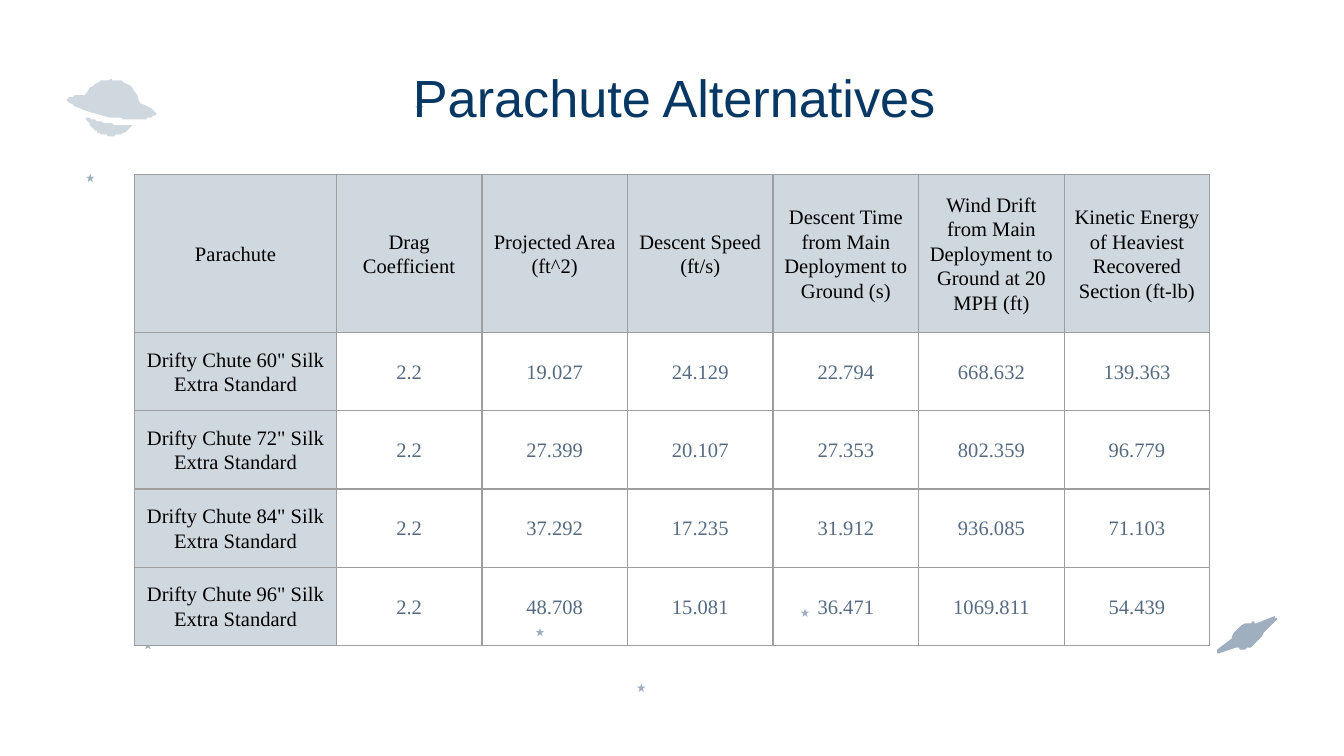
from lxml import etree
from pptx import Presentation
from pptx.dml.color import RGBColor
from pptx.enum.shapes import MSO_SHAPE
from pptx.enum.text import MSO_ANCHOR, PP_ALIGN
from pptx.oxml.ns import qn
from pptx.util import Pt

CENTER, MIDDLE, STAR = PP_ALIGN.CENTER, MSO_ANCHOR.MIDDLE, MSO_SHAPE.STAR_5_POINT
NAVY = RGBColor(0x07, 0x37, 0x63)
SLATE = RGBColor(0x56, 0x6B, 0x81)
BLACK = RGBColor(0, 0, 0)
PALE = RGBColor(0xCF, 0xD7, 0xDF)
STEEL = RGBColor(0x9F, 0xAF, 0xBF)
GREY = RGBColor(0x9E, 0x9E, 0x9E)

TITLE = "Parachute Alternatives"
HEADER = [
    "Parachute", "Drag Coefficient", "Projected Area (ft^2)", "Descent Speed (ft/s)",
    "Descent Time from Main Deployment to Ground (s)",
    "Wind Drift from Main Deployment to Ground at 20 MPH (ft)",
    "Kinetic Energy of Heaviest Recovered Section (ft-lb)",
]
PARACHUTES = [
    ('Drifty Chute 60" Silk Extra Standard', "2.2", "19.027", "24.129", "22.794", "668.632", "139.363"),
    ('Drifty Chute 72" Silk Extra Standard', "2.2", "27.399", "20.107", "27.353", "802.359", "96.779"),
    ('Drifty Chute 84" Silk Extra Standard', "2.2", "37.292", "17.235", "31.912", "936.085", "71.103"),
    ('Drifty Chute 96" Silk Extra Standard', "2.2", "48.708", "15.081", "36.471", "1069.811", "54.439"),
]
COLUMN_WIDTHS = [108] + [78] * 6
ROW_HEIGHTS = [84.6] + [41.9] * 4

STAR_SIZE = 4.5
STARS = [(77, 343.4), (341.3, 366.2), (429, 326), (46.1, 93), (222.5, 55.3), (287, 336.4)]

# Outlines: a start point, then lines (x, y) and Bezier curves (x1, y1, x2, y2, x, y).
PLANET_BOTTOM = [
    (45.4, 62.6), (46.8, 64.8, 48.2, 67, 49.7, 69.1), (52.6, 71.3, 56.2, 72.7, 59.8, 72.7),
    (64.1, 72.7, 68.4, 70.6, 71.3, 67), (67, 67, 62.6, 67, 58.3, 66.2),
    (54, 65.5, 49.7, 64.1, 45.4, 62.6),
]
PLANET_TOP = [
    (59.8, 42.5), (53.3, 42.5, 47.5, 46.1, 45.4, 51.8), (46.8, 51.8, 47.5, 51.8, 48.2, 51.8),
    (52.6, 51.8, 56.2, 52.6, 60.5, 53.3), (65.5, 54, 70.6, 55.4, 74.9, 56.9),
    (74.9, 51.1, 70.6, 45.4, 64.8, 43.2), (63.4, 42.5, 61.2, 42.5, 59.8, 42.5),
]
PLANET_RING = [
    (46.1, 51.1), (40.3, 51.1, 36.7, 51.8, 36, 53.3), (36, 56.2, 46.1, 60.5, 59, 62.6),
    (64.1, 63.4, 69.1, 64.1, 73.4, 64.1), (79.2, 64.1, 82.8, 62.6, 83.5, 61.2),
    (83.5, 58.3, 73.4, 54, 60.5, 51.8), (55.4, 51.1, 50.4, 51.1, 46.1, 51.1),
]
FAR_PLANET = [
    (682.6, 330.5), (673.2, 334.1), (672.5, 333.4, 671.8, 333.4, 671, 333.4),
    (666, 333.4, 661, 337, 659.5, 342), (652.3, 348.5),
    (651.6, 349.2, 651.6, 349.9, 652.3, 349.9), (653, 349.9), (662.4, 347),
    (663.8, 347, 664.6, 347.8, 665.3, 347.8), (670.3, 347.8, 674.6, 344.2, 676.8, 339.1),
    (684, 331.9), (684, 331.2, 684, 330.5, 683.3, 330.5),
]
OUTLINES = [(PLANET_BOTTOM, PALE), (PLANET_TOP, PALE), (PLANET_RING, PALE), (FAR_PLANET, STEEL)]


def curve_points(start, curve, steps=10):
    """Return points along a cubic Bezier curve, without its start."""
    points = []
    for i in range(1, steps + 1):
        t = i / steps
        u = 1 - t
        points.append(tuple(
            u**3 * start[k] + 3 * u * u * t * curve[k]
            + 3 * u * t * t * curve[k + 2] + t**3 * curve[k + 4]
            for k in (0, 1)))
    return points


def paint(sp, color):
    sp.shadow.inherit = False
    sp.fill.solid()
    sp.fill.fore_color.rgb = color
    sp.line.fill.background()


def add_outline(slide, outline, color):
    points = [outline[0]]
    for segment in outline[1:]:
        points += [segment] if len(segment) == 2 else curve_points(points[-1], segment)
    builder = slide.shapes.build_freeform(*points[0], scale=float(Pt(1)))
    builder.add_line_segments(points[1:], close=True)
    paint(builder.convert_to_shape(), color)


def write(tf, text, *, font, size, color, spacing=None):
    p = tf.paragraphs[0]
    p.alignment = CENTER
    p.line_spacing = spacing
    r = p.add_run()
    r.text = text
    r.font.name = font
    r.font.size = Pt(size)
    r.font.color.rgb = color


def add_borders(cell):
    tc_pr = cell._tc.get_or_add_tcPr()
    for side in ("lnL", "lnR", "lnT", "lnB"):
        ln = etree.SubElement(tc_pr, qn(f"a:{side}"), w=str(Pt(0.75)))
        fill = etree.SubElement(ln, qn("a:solidFill"))
        etree.SubElement(fill, qn("a:srgbClr"), val=str(GREY))


def add_parachute_table(slide):
    rows = [HEADER] + PARACHUTES
    table = slide.shapes.add_table(
        len(rows), len(HEADER), Pt(72.2), Pt(93.6),
        Pt(sum(COLUMN_WIDTHS)), Pt(sum(ROW_HEIGHTS))).table
    table.horz_banding = False
    table.first_row = False
    for column, width in zip(table.columns, COLUMN_WIDTHS):
        column.width = Pt(width)
    for i, values in enumerate(rows):
        table.rows[i].height = Pt(ROW_HEIGHTS[i])
        for j, text in enumerate(values):
            cell = table.cell(i, j)
            heading = i == 0 or j == 0
            cell.vertical_anchor = MIDDLE
            cell.margin_left = cell.margin_right = Pt(5)
            cell.margin_top = cell.margin_bottom = 0
            add_borders(cell)
            if heading:
                cell.fill.solid()
                cell.fill.fore_color.rgb = PALE
            else:
                cell.fill.background()
            write(cell.text_frame, text, font="Times New Roman", size=11,
                  color=BLACK if heading else SLATE, spacing=1.07)


def main():
    prs = Presentation()
    prs.slide_width, prs.slide_height = Pt(720), Pt(405)
    slide = prs.slides.add_slide(prs.slide_layouts[5])

    for outline, color in OUTLINES:
        add_outline(slide, outline, color)
    for x, y in STARS:
        paint(slide.shapes.add_shape(STAR, Pt(x), Pt(y), Pt(STAR_SIZE), Pt(STAR_SIZE)), STEEL)

    title = slide.shapes.title
    title.element.getparent().append(title.element)  # in front of the stars
    title.left, title.top, title.width, title.height = Pt(56.2), Pt(29.5), Pt(609.8), Pt(44)
    tf = title.text_frame
    tf.vertical_anchor = MIDDLE
    tf.margin_left = tf.margin_right = tf.margin_top = tf.margin_bottom = Pt(7.2)
    write(tf, TITLE, font="Arial", size=28, color=NAVY)

    add_parachute_table(slide)
    prs.save("out.pptx")


if __name__ == "__main__":
    main()
